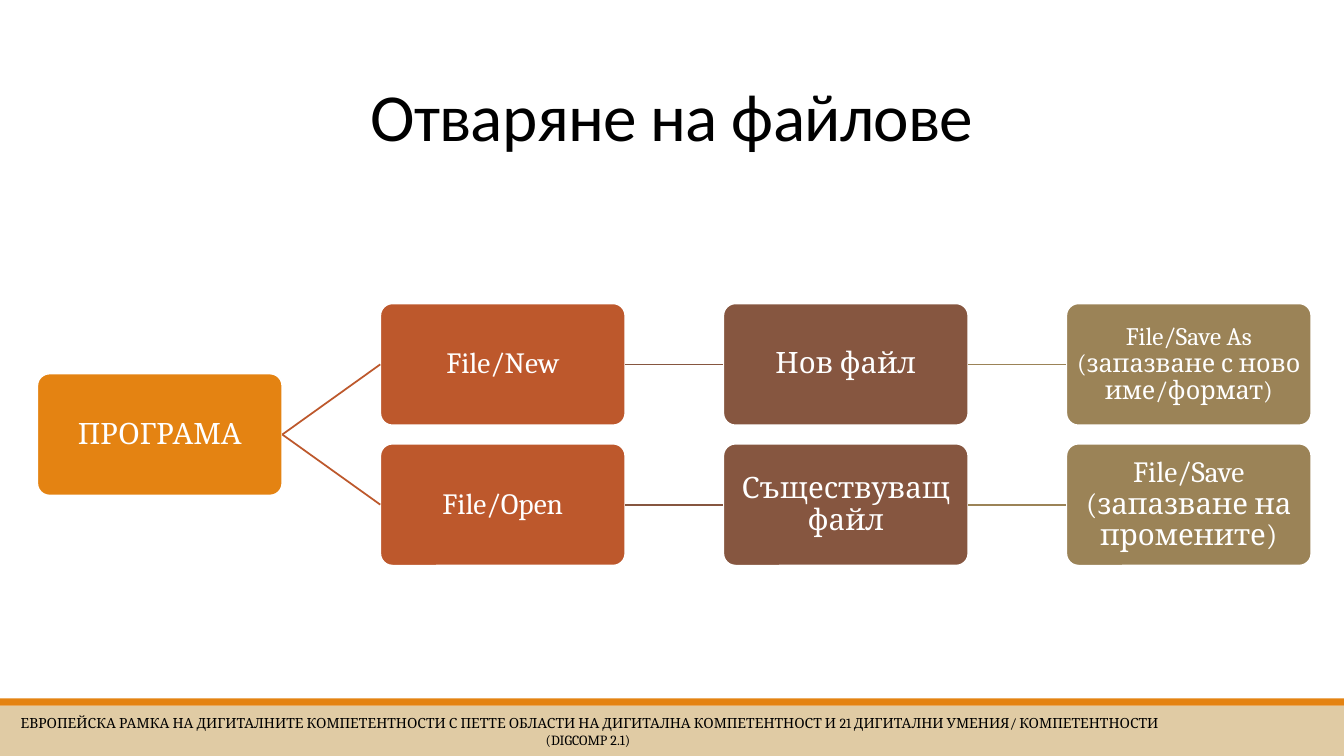
from pptx import Presentation
from pptx.dml.color import RGBColor
from pptx.enum.shapes import MSO_CONNECTOR, MSO_SHAPE
from pptx.enum.text import MSO_ANCHOR, PP_ALIGN
from pptx.oxml.ns import qn
from pptx.util import Inches, Pt
from lxml.etree import SubElement

THEME = {
    "levels": ["E48312", "BD582C", "865640", "9B8357"],
    "band": "E0CBA4", "accent": "E48312", "light": "FFFFFF", "dark": "000000",
    "heading_font": "Calibri", "body_font": "Cambria",
    "title_size": 48, "node_size": 21, "long_node_size": 18, "footer_size": 10,
    "line": 1.25,
}
WIDTH, HEIGHT = 13.33, 7.5
NODE_W, NODE_H = 2.43, 1.21
LEFT, TOP = 0.37, 3.01
COLUMN_STEP, ROW_STEP = NODE_W * 1.4, NODE_H * 1.15
LONG_LABEL = 36

deck = Presentation()
deck.slide_width, deck.slide_height = Inches(WIDTH), Inches(HEIGHT)
slide = deck.slides.add_slide(deck.slide_layouts[6])


def add_box(preset, left, top, width, height, fill):
    box = slide.shapes.add_shape(
        preset, Inches(left), Inches(top), Inches(width), Inches(height))
    box.shadow.inherit = False
    box.fill.solid()
    box.fill.fore_color.rgb = RGBColor.from_string(fill)
    box.line.fill.background()
    return box


def write(holder, lines, font, size, color, anchor, inset, spacing):
    frame = holder.text_frame
    frame.word_wrap = True
    frame.vertical_anchor = anchor
    frame.margin_left = frame.margin_right = Inches(inset)
    frame.margin_top = frame.margin_bottom = Inches(min(inset, 0.05))
    paragraph = frame.paragraphs[0]
    paragraph.alignment = PP_ALIGN.CENTER
    paragraph.line_spacing = spacing
    for index, line in enumerate(lines):
        if index:
            paragraph.add_line_break()
        run = paragraph.add_run()
        run.text = line
        run.font.name = font
        run.font.size = Pt(size)
        run.font.color.rgb = RGBColor.from_string(color)
    return paragraph


add_box(MSO_SHAPE.RECTANGLE, 0, 7, WIDTH, 0.5, THEME["band"])
add_box(MSO_SHAPE.RECTANGLE, 0, 6.93, WIDTH, 0.07, THEME["accent"])

title = slide.shapes.add_textbox(0, 0, Inches(WIDTH), Inches(1.59))
heading = write(title, ["Отваряне на файлове"], THEME["heading_font"],
                THEME["title_size"], THEME["dark"], MSO_ANCHOR.BOTTOM, 0.1, 0.85)
heading.runs[0].font._element.set("spc", "-50")

steps = [
    (0, 0.5, ["ПРОГРАМА"], None),
    (1, 0, ["File/New"], 0),
    (2, 0, ["Нов файл"], 1),
    (3, 0, ["File/Save As", "(запазване с ново име/формат)"], 2),
    (1, 1, ["File/Open"], 0),
    (2, 1, ["Съществуващ файл"], 4),
    (3, 1, ["File/Save", "(запазване на промените)"], 5),
]
nodes = []
for column, row, lines, parent in steps:
    color = THEME["levels"][column]
    node = add_box(MSO_SHAPE.ROUNDED_RECTANGLE, LEFT + column * COLUMN_STEP,
                   TOP + row * ROW_STEP, NODE_W, NODE_H, color)
    node.adjustments[0] = 0.1
    node.line.color.rgb = RGBColor.from_string(THEME["light"])
    node.line.width = Pt(THEME["line"])
    is_long = len("".join(lines)) > LONG_LABEL
    size = THEME["long_node_size"] if is_long else THEME["node_size"]
    write(node, lines, THEME["body_font"], size, THEME["light"],
          MSO_ANCHOR.MIDDLE, 0.01, 0.9)
    nodes.append(node)
    if parent is not None:
        branch = slide.shapes.add_connector(MSO_CONNECTOR.STRAIGHT, 0, 0, 0, 0)
        branch.begin_connect(nodes[parent], 3)
        branch.end_connect(node, 1)
        branch.line.color.rgb = RGBColor.from_string(color)
        branch.line.width = Pt(THEME["line"])
        SubElement(branch._element.spPr, qn("a:effectLst"))

footer = slide.shapes.add_textbox(0, Inches(7.06), Inches(WIDTH * 0.875), Inches(0.4))
write(footer,
      [" ЕВРОПЕЙСКА РАМКА НА ДИГИТАЛНИТЕ КОМПЕТЕНТНОСТИ С ПЕТТЕ ОБЛАСТИ НА "
       "ДИГИТАЛНА КОМПЕТЕНТНОСТ И 21 ДИГИТАЛНИ УМЕНИЯ/ КОМПЕТЕНТНОСТИ (DIGCOMP 2.1)"],
      THEME["body_font"], THEME["footer_size"], THEME["dark"],
      MSO_ANCHOR.MIDDLE, 0.04, 1.0)

deck.save("out.pptx")
